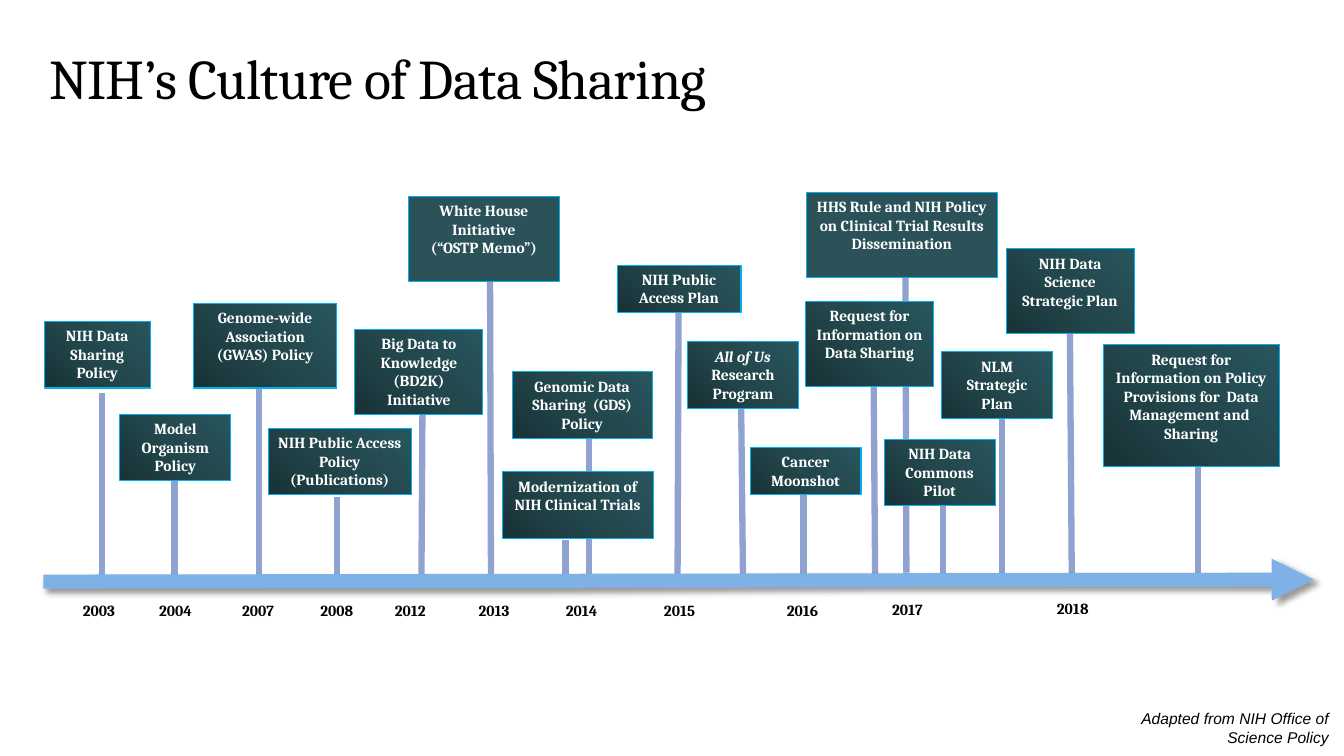
from copy import deepcopy

from lxml.etree import SubElement
from pptx import Presentation
from pptx.dml.color import RGBColor
from pptx.enum.shapes import MSO_CONNECTOR as Connector, MSO_SHAPE as Preset
from pptx.enum.text import MSO_ANCHOR as Anchor, PP_ALIGN as Align
from pptx.oxml.ns import qn
from pptx.util import Inches, Pt

BLACK = RGBColor(0x00, 0x00, 0x00)
WHITE = RGBColor(0xFF, 0xFF, 0xFF)
STEM_BLUE = RGBColor(0x90, 0xA2, 0xCF)
ARROW_BLUE = RGBColor(0x7E, 0xB2, 0xE6)
BORDER_BLUE = RGBColor(0x00, 0xB0, 0xF0)
FLAT_TEAL = RGBColor(0x2B, 0x52, 0x59)
GRADIENT_TEALS = [RGBColor(0x18, 0x32, 0x36), RGBColor(0x22, 0x47, 0x4D),
                  RGBColor(0x28, 0x55, 0x5C)]

TITLE_FONT = {"name": "Cambria", "size": Pt(40)}
YEAR_FONT = {"name": "Cambria", "size": Pt(11), "bold": True}
CREDIT_FONT = {"name": "Arial", "size": Pt(11.1), "italic": True}

# Box heights by the number of text lines they hold
TWO, THREE, FOUR, SIX = 0.47, 0.66, 0.84, 1.21

# Stems: x and y at the axis, x and y at the box
STEMS = [
    (1.01, 5.77, 1.01, 3.9), (1.73, 5.8, 1.73, 4.77), (2.57, 5.75, 2.57, 3.73),
    (3.34, 5.74, 3.34, 4.93), (4.18, 5.73, 4.19, 4.09), (4.87, 5.78, 4.86, 2.58),
    (5.61, 5.69, 5.61, 5.36), (5.84, 5.7, 5.84, 4.27), (6.72, 5.81, 6.73, 3.1),
    (7.37, 5.78, 7.35, 3.95), (7.97, 5.76, 7.97, 4.8), (8.68, 5.76, 8.66, 3.11),
    (8.99, 5.68, 8.98, 2.49), (9.35, 5.75, 9.35, 4.74), (9.94, 5.69, 9.94, 4.02),
    (10.63, 5.7, 10.61, 3.05), (11.88, 5.74, 11.88, 4.08),
]

# Years: label, centre, top
YEARS = [
    ("2003", 0.98, 5.91), ("2004", 1.74, 5.91), ("2007", 2.56, 5.91),
    ("2008", 3.34, 5.91), ("2012", 4.07, 5.91), ("2013", 4.9, 5.91),
    ("2014", 5.77, 5.91), ("2015", 6.74, 5.91), ("2016", 7.96, 5.91),
    ("2017", 9, 5.9), ("2018", 10.64, 5.89),
]

# Milestones: text (one line per paragraph), left, top, width, height
MILESTONES = [
    ("NIH Data Sharing Policy", 0.44, 3.19, 1.05, THREE),
    ("Model Organism Policy", 1.19, 4.11, 1.1, THREE),
    ("Genome-wide Association (GWAS) Policy", 1.92, 3.01, 1.42, FOUR),
    ("NIH Public Access Policy (Publications)", 2.66, 4.25, 1.42, THREE),
    ("Big Data to Knowledge (BD2K) Initiative", 3.52, 3.27, 1.27, FOUR),
    ("Genomic Data Sharing  (GDS) Policy", 5.08, 3.69, 1.39, THREE),
    ("Modernization of NIH Clinical Trials", 4.98, 4.68, 1.5, THREE),
    ("NIH Public Access Plan", 6.12, 2.63, 1.23, TWO),
    ("All of Us Research Program", 6.82, 3.39, 1.1, THREE),
    ("Cancer Moonshot", 7.44, 4.44, 1.1, TWO),
    ("Request for Information on Data Sharing", 7.99, 2.99, 1.27, FOUR),
    ("NIH Data Commons Pilot", 8.77, 4.36, 1.1, THREE),
    ("NLM Strategic Plan", 9.34, 3.49, 1.1, THREE),
    ("NIH Data Science Strategic Plan", 9.98, 2.47, 1.27, FOUR),
    ("Request for Information on Policy Provisions for  Data Management and  Sharing",
     10.94, 3.42, 1.75, SIX),
]
FEDERAL_MILESTONES = [
    ("White House Initiative\n(“OSTP Memo”)", 4.05, 1.95, 1.5, FOUR),
    ("HHS Rule and NIH Policy on Clinical Trial Results Dissemination",
     8, 1.91, 1.89, FOUR),
]
ITALIC_START = "All of Us "


def add_run(paragraph, text, color, font_values, italic=None):
    run = paragraph.add_run()
    run.text = text
    for name, value in font_values.items():
        setattr(run.font, name, value)
    run.font.color.rgb = color
    if italic:
        run.font.italic = True
    return run


def add_title(slide, text):
    title = slide.shapes.title
    title.left, title.top = Inches(0.39), Inches(0.42)
    title.width, title.height = Inches(10.86), Inches(0.74)
    title.text_frame.vertical_anchor = Anchor.BOTTOM
    paragraph = title.text_frame.paragraphs[0]
    paragraph.alignment = Align.LEFT
    paragraph.line_spacing = 0.9
    run = add_run(paragraph, text, BLACK, TITLE_FONT)
    run.font._element.set("spc", "-50")


def add_label(slide, text, box, alignment, font_values):
    label = slide.shapes.add_textbox(*map(Inches, box))
    label.text_frame.word_wrap = True
    paragraph = label.text_frame.paragraphs[0]
    paragraph.alignment = alignment
    add_run(paragraph, text, BLACK, font_values)
    return label.text_frame


def add_line(slide, ends, color, width):
    """Add a line and return it with its empty effect list."""
    line = slide.shapes.add_connector(Connector.STRAIGHT, *map(Inches, ends))
    line.line.color.rgb = color
    line.line.width = Pt(width)
    effects = SubElement(line._element.spPr, qn("a:effectLst"))
    return line, effects


def add_time_arrow(slide):
    arrow, effects = add_line(slide, (0.43, 5.77, 13.03, 5.75), ARROW_BLUE, 10)
    outline = arrow._element.spPr.find(qn("a:ln"))
    SubElement(outline, qn("a:tailEnd"), type="triangle")
    shadow = SubElement(effects, qn("a:outerShdw"), blurRad=str(Pt(4)),
                        dist=str(Pt(3)), dir="2700000", rotWithShape="0")
    shade = SubElement(shadow, qn("a:srgbClr"), val=str(BLACK))
    SubElement(shade, qn("a:alpha"), val="40000")


def fill_gradient(shape):
    shape.fill.gradient()
    shape.fill.gradient_angle = 45
    stop_list = shape._element.spPr.find(qn("a:gradFill")).find(qn("a:gsLst"))
    stop_list.insert(1, deepcopy(stop_list[0]))
    for index, stop in enumerate(shape.fill.gradient_stops):
        stop.position = index / 2
        stop.color.rgb = GRADIENT_TEALS[index]


def add_milestone(slide, text, *box, flat=False):
    shape = slide.shapes.add_shape(Preset.RECTANGLE, *map(Inches, box))
    shape.shadow.inherit = False
    if flat:
        shape.fill.solid()
        shape.fill.fore_color.rgb = FLAT_TEAL
    else:
        fill_gradient(shape)
    shape.line.color.rgb = BORDER_BLUE
    shape.line.width = Pt(0.75)
    frame = shape.text_frame
    frame.word_wrap = True
    frame.vertical_anchor = Anchor.TOP
    for index, line in enumerate(text.split("\n")):
        paragraph = frame.add_paragraph() if index else frame.paragraphs[0]
        paragraph.alignment = Align.CENTER
        if line.startswith(ITALIC_START):
            add_run(paragraph, ITALIC_START, WHITE, YEAR_FONT, italic=True)
            line = line.removeprefix(ITALIC_START)
        add_run(paragraph, line, WHITE, YEAR_FONT)


def main():
    presentation = Presentation()
    presentation.slide_width = Inches(13.33)
    presentation.slide_height = Inches(7.5)
    slide = presentation.slides.add_slide(presentation.slide_layouts[5])
    add_title(slide, "NIH’s Culture of Data Sharing")

    # Timeline
    for stem in STEMS:
        add_line(slide, stem, STEM_BLUE, 4.5)
    add_time_arrow(slide)
    for year, center, top in YEARS:
        add_label(slide, year, (center - 0.375, top, 0.75, 0.29), Align.CENTER, YEAR_FONT)

    # Milestone boxes
    for milestone in MILESTONES:
        add_milestone(slide, *milestone)
    for milestone in FEDERAL_MILESTONES:
        add_milestone(slide, *milestone, flat=True)

    # Credit
    credit = add_label(slide, "Adapted from NIH Office of Science Policy",
                       (10.86, 7.02, 2.37, 0.4), Align.RIGHT, CREDIT_FONT)
    credit.vertical_anchor = Anchor.MIDDLE
    credit.margin_left = credit.margin_right = Inches(0.05)

    presentation.save("out.pptx")


if __name__ == "__main__":
    main()
